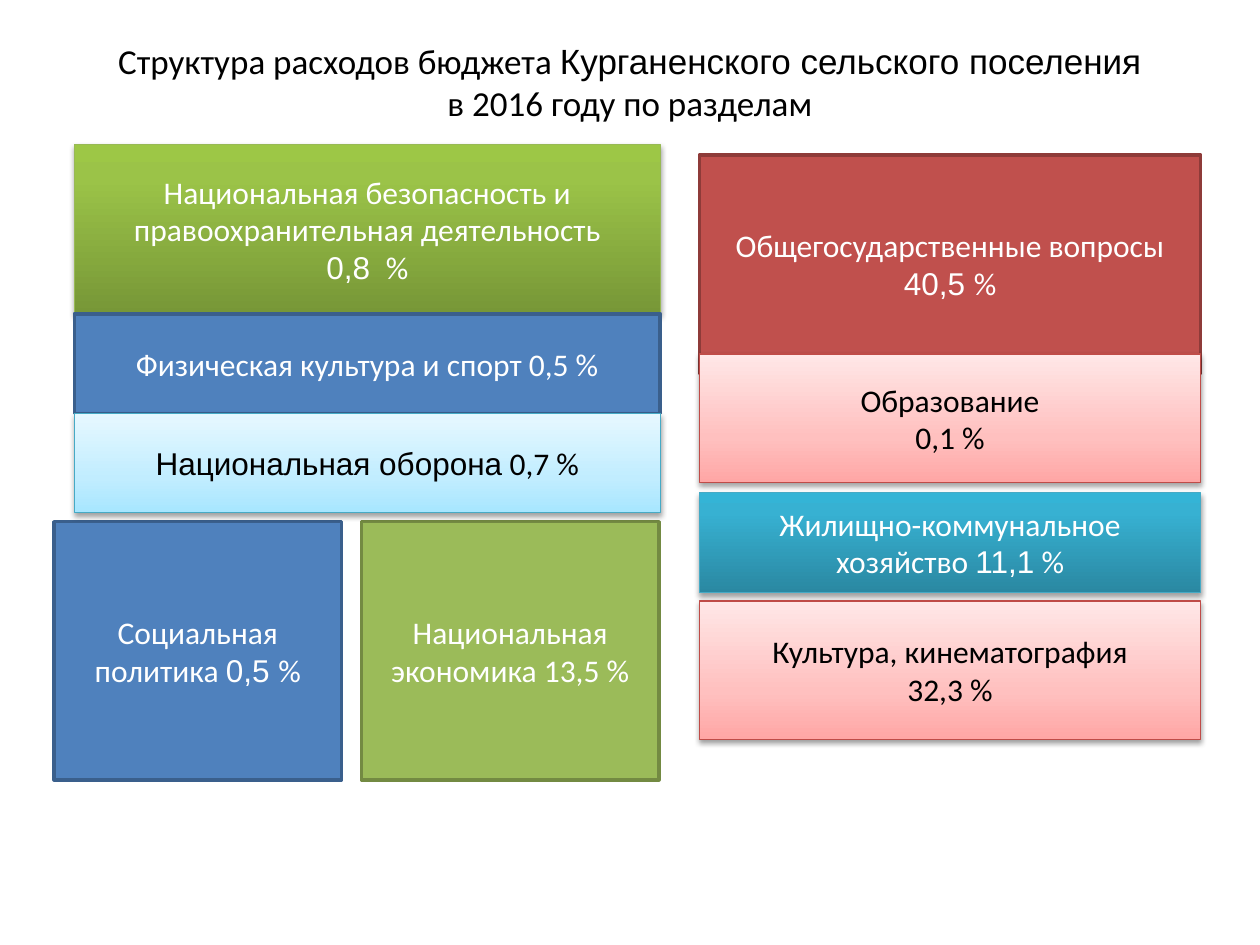
from dataclasses import dataclass
from itertools import cycle

from pptx import Presentation
from pptx import util as u
from pptx.dml.color import RGBColor
from pptx.enum import shapes, text
from pptx.oxml import parse_xml
from pptx.oxml.ns import nsdecls

# Look: fill (one colour, or gradient stops from the bottom up), line, ink
LIGHT, DARK = "FFFFFF", "000000"


@dataclass(frozen=True)
class Theme:
    title: int = 20
    body: int = 18
    fonts: tuple = ("Calibri", "Arial")
    blue: tuple = ("4F81BD", "3A5F8C", LIGHT)
    green: tuple = ("9BBB59", "738A42", LIGHT)
    red: tuple = ("C0504D", "8E3B39", LIGHT)
    leaf: tuple = (((0, "779737"), (80, "9BC348"), (100, "9DC746")), "98B955", LIGHT)
    teal: tuple = (((0, "2A88A2"), (80, "37B1D2"), (100, "34B4D6")), "46AAC5", LIGHT)
    rose: tuple = (((0, "FFA6A5"), (35, "FFC0BF"), (100, "FFE7E7")), "BF4C48", DARK)
    sky: tuple = (((0, "A7E6FF"), (35, "C1EDFF"), (100, "E7F8FF")), "46AAC5", DARK)


THEME = Theme()


def write(frame, words, size, ink):
    """Fill a frame, one paragraph a line; each "|" switches to the other font."""
    form = {"word_wrap": True, "auto_size": text.MSO_AUTO_SIZE.NONE,
            "vertical_anchor": text.MSO_ANCHOR.MIDDLE}
    for key, value in form.items():
        setattr(frame, key, value)
    for index, line in enumerate(words.split("\n")):
        para = frame.add_paragraph() if index else frame.paragraphs[0]
        para.alignment = text.PP_ALIGN.CENTER
        for part, font in zip(line.split("|"), cycle(THEME.fonts)):
            if not part:
                continue
            run = para.add_run()
            run.text = part
            for key, value in {"name": font, "size": u.Pt(size), "bold": False}.items():
                setattr(run.font, key, value)
            run.font.color.rgb = RGBColor.from_string(ink)


def blend(shape, stops):
    """Give the shape an upward gradient and a soft shadow below."""
    marks = "".join(f'<a:gs pos="{pos * 1000}"><a:srgbClr val="{tint}"/></a:gs>'
                    for pos, tint in stops)
    fill = parse_xml(f'<a:gradFill {nsdecls("a")} rotWithShape="1"><a:gsLst>{marks}'
                     '</a:gsLst><a:lin ang="16200000" scaled="0"/></a:gradFill>')
    props = shape.fill._xPr
    props.find("{*}prstGeom").addnext(fill)
    shade = parse_xml(
        f'<a:outerShdw {nsdecls("a")} blurRad="{u.Pt(3.1)}" dist="{u.Pt(1.7)}" '
        'dir="5400000" rotWithShape="0"><a:srgbClr val="000000">'
        '<a:alpha val="36000"/></a:srgbClr></a:outerShdw>')
    props.find("{*}effectLst").append(shade)


def block(slide, box, words, look):
    fill, edge, ink = look
    shape = slide.shapes.add_shape(shapes.MSO_SHAPE.RECTANGLE, *map(u.Inches, box))
    shape.shadow.inherit = False
    flat = isinstance(fill, str)
    shape.line.color.rgb = RGBColor.from_string(edge)
    shape.line.width = u.Pt(2 if flat else 0.75)
    if flat:
        shape.fill.solid()
        shape.fill.fore_color.rgb = RGBColor.from_string(fill)
    else:
        blend(shape, fill)
    write(shape.text_frame, words, THEME.body, ink)


def head(slide, box, words):
    title = slide.shapes.title
    for key, value in zip(("left", "top", "width", "height"), box):
        setattr(title, key, u.Inches(value))
    write(title.text_frame, words, THEME.title, DARK)


def stack(slide, box, rows):
    """Stack blocks down the box; a row is gap above, height, words, look."""
    left, top, width = box
    for gap, high, words, look in rows:
        top += gap
        block(slide, (left, top, width, high), words, look)
        top += high


def pair(slide, box, gap, cells):
    """Set blocks side by side; a cell is width, words, look."""
    left, top, high = box
    for width, words, look in cells:
        block(slide, (left, top, width, high), words, look)
        left += width + gap


def main():
    deck = Presentation()
    deck.slide_width, deck.slide_height = u.Inches(10), u.Inches(7.5)
    slide = deck.slides.add_slide(deck.slide_layouts[5])
    head(slide, (0.5, 0.3, 9, 0.69),
         "Структура расходов бюджета |Курганенского сельского поселения\n"
         "в 2016 году по разделам")
    pair(slide, (0.43, 4.14, 2.05), 0.16, [
        (2.28, "Социальная политика |0,5 |%", THEME.blue),
        (2.36, "Национальная экономика 13,5 %", THEME.green),
    ])
    stack(slide, (0.59, 1.15, 4.65), [
        (0, 1.34, "Национальная безопасность и правоохранительная деятельность\n|0,8 | %",
         THEME.leaf),
        (0, 0.79, "Физическая культура и спорт 0,5 %", THEME.blue),
        (0, 0.79, "|Национальная оборона| 0,7 %", THEME.sky),
    ])
    stack(slide, (5.55, 1.23, 3.98), [
        (0, 1.73, "Общегосударственные вопросы\n|40,5 |%", THEME.red),
        (-0.15, 1.02, "Образование\n0,1 %", THEME.rose),
        (0.08, 0.79, "Жилищно-коммунальное хозяйство |11,1| %", THEME.teal),
        (0.07, 1.1, "Культура, кинематография\n32,3 %", THEME.rose),
    ])
    deck.save("out.pptx")


if __name__ == "__main__":
    main()
